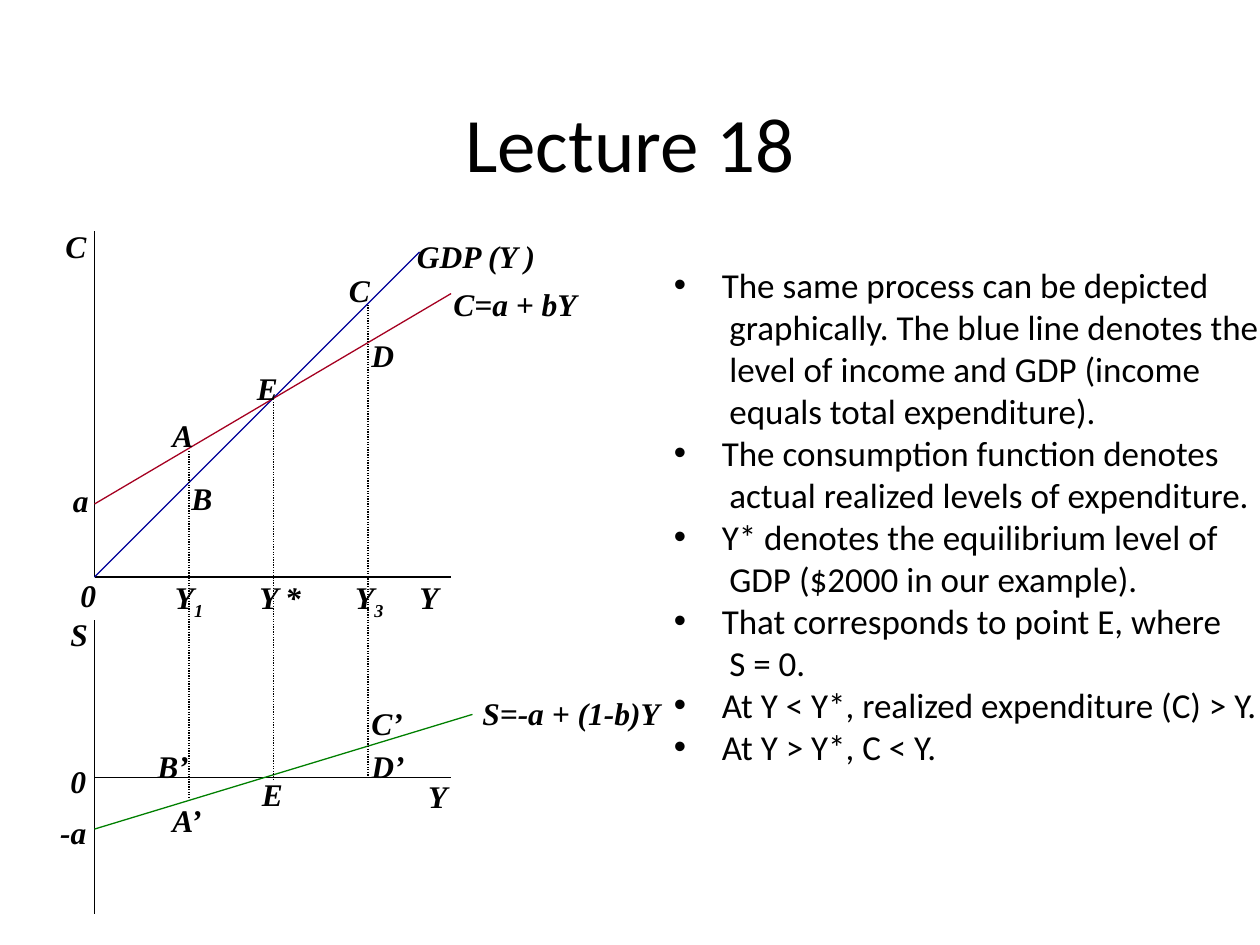
from lxml import etree
from pptx import Presentation
from pptx import util as u
from pptx.dml.color import RGBColor
from pptx.enum import dml, shapes, text
from pptx.oxml.ns import qn

COLORS = {
    "ink": "000000",
    "income": "000099",
    "consumption": "A50021",
    "saving": "008000",
}

AXIS_X = 0.75
AXIS_END = 3.58
INCOME_ZERO = 4.58
SAVING_ZERO = 6.17

LINES = [
    ((AXIS_X, INCOME_ZERO), (AXIS_END, INCOME_ZERO), "ink"),
    ((AXIS_X, SAVING_ZERO), (AXIS_END, SAVING_ZERO), "ink"),
    ((AXIS_X, INCOME_ZERO), (AXIS_X, 1.83), "ink"),
    ((AXIS_X, 7.25), (AXIS_X, 4.92), "ink"),
    ((AXIS_X, INCOME_ZERO), (3.33, 2), "income"),
    ((AXIS_X, 4), (AXIS_END, 2.33), "consumption"),
    ((AXIS_X, 6.58), (3.75, 5.67), "saving"),
]

GUIDES = [(1.5, 3.58, 6.33), (2.17, 3.19, 6.19), (2.92, 2.42, 6.17)]

LABELS = [
    ("Y", "1", 1.29, 4.54, 0.6),
    ("Y *", "", 1.96, 4.54, 0.7),
    ("Y", "3", 2.72, 4.54, 0.6),
    ("Y", "", 3.23, 4.54, 0.4),
    ("Y", "", 3.3, 6.12, 0.4),
    ("S=-a + (1-b)Y", "", 3.73, 5.46, 1.7),
    ("C=a + bY", "", 3.5, 2.21, 1.3),
    ("GDP (Y )", "", 3.21, 1.83, 1.25),
    ("S", "", 0.46, 4.83, 0.4),
    ("0", "", 0.54, 4.52, 0.4),
    ("0", "", 0.46, 6, 0.4),
    ("-a", "", 0.38, 6.4, 0.5),
    ("a", "", 0.48, 3.77, 0.4),
    ("C", "", 0.42, 1.75, 0.4),
    ("E", "", 1.94, 2.88, 0.4),
    ("E", "", 1.98, 6.1, 0.4),
    ("A", "", 1.27, 3.25, 0.4),
    ("A’", "", 1.27, 6.31, 0.5),
    ("B’", "", 1.15, 5.88, 0.5),
    ("B", "", 1.42, 3.75, 0.4),
    ("C’", "", 2.85, 5.54, 0.5),
    ("C", "", 2.67, 2.1, 0.4),
    ("D’", "", 2.85, 5.88, 0.5),
    ("D", "", 2.85, 2.62, 0.4),
]

POINTS = [
    ["The same process can be depicted",
     "graphically. The blue line denotes the",
     "level of income and GDP (income",
     "equals total expenditure)."],
    ["The consumption function denotes",
     "actual realized levels of expenditure."],
    ["Y* denotes the equilibrium level of",
     "GDP ($2000 in our example)."],
    ["That corresponds to point E, where",
     "S = 0."],
    ["At Y < Y*, realized expenditure (C) > Y."],
    ["At Y > Y*, C < Y."],
]


def add_run(paragraph, content, font="Calibri", size=20, color="ink",
            emphasis=False, baseline=0):
    """Append a formatted run to the paragraph."""
    run = paragraph.add_run()
    run.text = content
    run.font.name = font
    run.font.size = u.Pt(size)
    run.font.bold = run.font.italic = emphasis
    run.font.color.rgb = RGBColor.from_string(COLORS[color])
    if baseline:
        run.font._element.set("baseline", str(baseline * 1000))


class LectureSlide:
    """Draw the lecture's elements on one slide in a shared style."""

    label_style = {"font": "Times New Roman", "size": 18, "emphasis": True}

    def __init__(self, slide):
        self.slide = slide

    def frame(self, left, top, width, height):
        box = self.slide.shapes.add_textbox(
            u.Inches(left), u.Inches(top), u.Inches(width), u.Inches(height))
        box.text_frame.word_wrap = True
        return box.text_frame

    def title(self, content):
        frame = self.frame(0.75, 0.5, 8.5, 1.25)
        frame.vertical_anchor = text.MSO_ANCHOR.MIDDLE
        paragraph = frame.paragraphs[0]
        paragraph.alignment = text.PP_ALIGN.CENTER
        add_run(paragraph, content, size=44)

    def line(self, start, end, color="ink", dotted=False):
        connector = self.slide.shapes.add_connector(
            shapes.MSO_CONNECTOR.STRAIGHT,
            *(u.Inches(value) for value in (*start, *end)))
        connector.line.color.rgb = RGBColor.from_string(COLORS[color])
        connector.line.width = u.Pt(0.75)
        if dotted:
            connector.line.dash_style = dml.MSO_LINE.ROUND_DOT
        etree.SubElement(connector._element.spPr, qn("a:effectLst"))

    def label(self, content, subscript, left, top, width):
        paragraph = self.frame(left, top, width, 0.4).paragraphs[0]
        add_run(paragraph, content, **self.label_style)
        if subscript:
            add_run(paragraph, subscript, baseline=-25, **self.label_style)

    def bullets(self, points):
        frame = self.frame(5.25, 2.04, 4.88, 4.48)
        paragraph = frame.paragraphs[0]
        for point in points:
            for index, content in enumerate(point):
                if point is not points[0] or index:
                    paragraph = frame.add_paragraph()
                paragraph.alignment = text.PP_ALIGN.JUSTIFY
                properties = paragraph._p.get_or_add_pPr()
                properties.set("marL", str(u.Inches(0.44 if index else 0.38)))
                properties.set("indent", str(u.Inches(0 if index else -0.38)))
                if index:
                    etree.SubElement(properties, qn("a:buNone"))
                else:
                    etree.SubElement(properties, qn("a:buFont"), typeface="Arial")
                    etree.SubElement(properties, qn("a:buChar"), char="•")
                add_run(paragraph, content)


def main():
    presentation = Presentation()
    presentation.slide_width = u.Inches(10)
    presentation.slide_height = u.Inches(7.5)
    lecture = LectureSlide(
        presentation.slides.add_slide(presentation.slide_layouts[6]))

    lecture.title("Lecture 18")
    for start, end, color in LINES:
        lecture.line(start, end, color)
    for x, top, bottom in GUIDES:
        lecture.line((x, top), (x, bottom), dotted=True)
    for label in LABELS:
        lecture.label(*label)
    lecture.bullets(POINTS)
    presentation.save("out.pptx")


if __name__ == "__main__":
    main()
